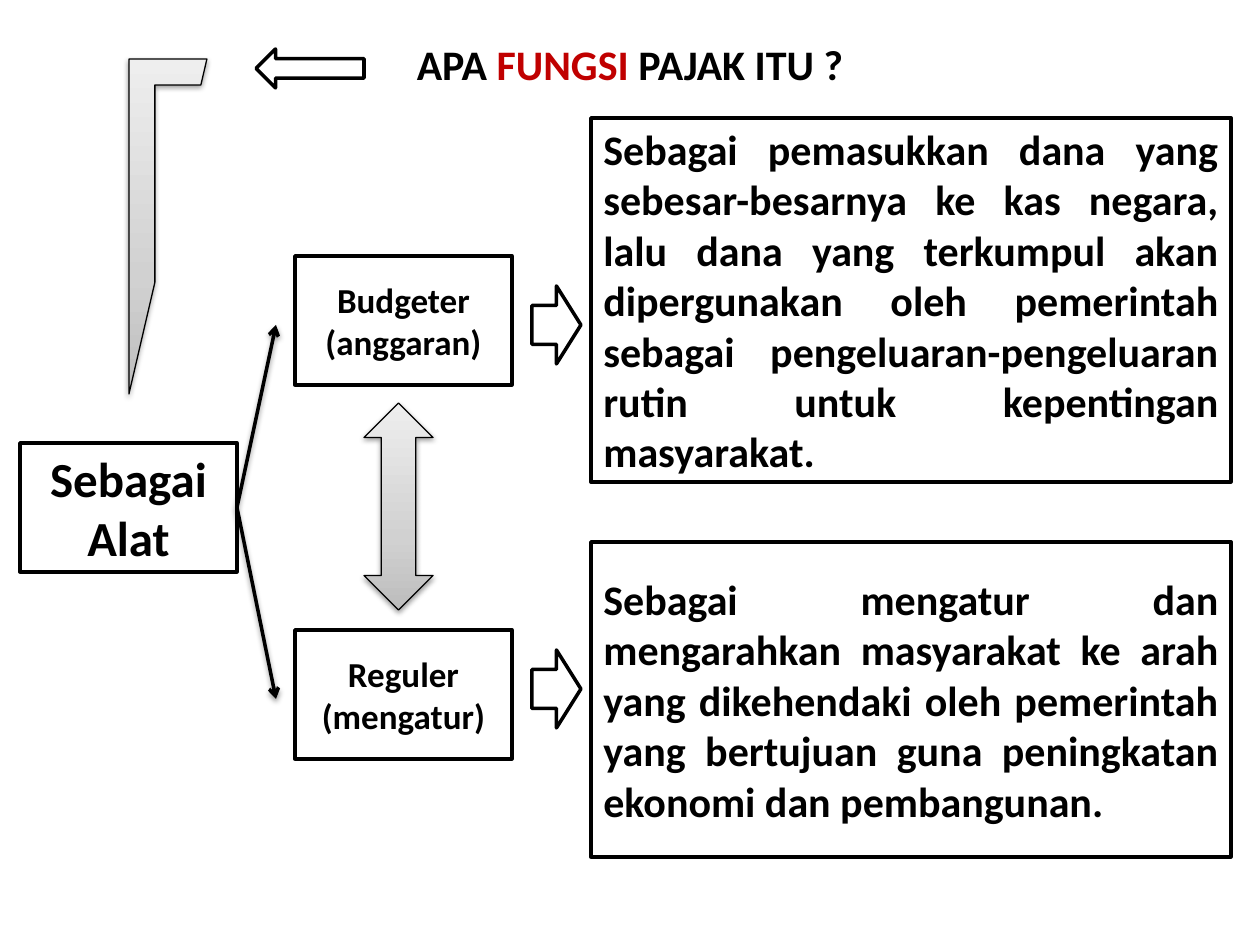
from copy import deepcopy
from dataclasses import dataclass

from pptx import Presentation
from pptx.dml.color import RGBColor
from pptx.enum.shapes import MSO_CONNECTOR, MSO_SHAPE
from pptx.enum.text import MSO_ANCHOR, MSO_AUTO_SIZE, PP_ALIGN
from pptx.oxml import parse_xml
from pptx.oxml.ns import nsdecls, qn
from pptx.util import Emu, Pt

SCALE = 914400 / 126
BLACK, WHITE, RED = "000000", "FFFFFF", "C00000"
GREYS = [(0, "BDBDBD"), (0.35, "D1D1D1"), (1, "EEEEEE")]
FRAME = {"word_wrap": True, "auto_size": MSO_AUTO_SIZE.NONE,
         "vertical_anchor": MSO_ANCHOR.MIDDLE}


@dataclass
class Box:
    x: int
    y: int
    w: int
    h: int
    text: str
    size: int
    align: PP_ALIGN = PP_ALIGN.CENTER


@dataclass
class Arrow:
    kind: MSO_SHAPE
    x: int
    y: int
    w: int
    h: int
    shaded: bool = False


SOURCE = Box(20, 443, 217, 129, "Sebagai Alat", 28)
BOXES = [
    Box(295, 256, 217, 129, "Budgeter (anggaran)", 20),
    Box(295, 630, 217, 129, "Reguler (mengatur)", 20),
    Box(591, 118, 640, 364, "Sebagai pemasukkan dana yang sebesar-besarnya ke kas "
        "negara, lalu dana yang terkumpul akan dipergunakan oleh pemerintah sebagai "
        "pengeluaran-pengeluaran rutin untuk kepentingan masyarakat.", 24, PP_ALIGN.JUSTIFY),
    Box(591, 542, 640, 315, "Sebagai mengatur dan mengarahkan masyarakat ke arah yang "
        "dikehendaki oleh pemerintah yang bertujuan guna peningkatan ekonomi dan "
        "pembangunan.", 24, PP_ALIGN.JUSTIFY),
]
ARROWS = [
    Arrow(MSO_SHAPE.RIGHT_ARROW, 532, 286, 49, 78),
    Arrow(MSO_SHAPE.RIGHT_ARROW, 532, 650, 49, 78),
    Arrow(MSO_SHAPE.LEFT_ARROW, 256, 49, 108, 39),
    Arrow(MSO_SHAPE.UP_DOWN_ARROW, 364, 403, 69, 207, True),
    Arrow(MSO_SHAPE.HALF_FRAME, 129, 59, 78, 335, True),
]
BRANCH_ENDS = [(276, 325), (276, 699)]
TITLE = [("APA ", BLACK), ("FUNGSI ", RED), ("PAJAK ITU ?", BLACK)]


def px(n: int) -> Emu:
    return Emu(round(n * SCALE))


def rgb(value: str) -> RGBColor:
    return RGBColor.from_string(value)


def apply(target, formats: dict) -> None:
    for name, value in formats.items():
        setattr(target, name, value)


def add_run(p, text: str, size: int, color: str) -> None:
    r = p.add_run()
    r.text = text
    apply(r.font, {"name": "Calibri", "size": Pt(size), "bold": True})
    r.font.color.rgb = rgb(color)


def add_shadow(sp) -> None:
    sp_pr = sp._element.spPr
    for old in sp_pr.findall(qn("a:effectLst")):
        sp_pr.remove(old)
    sp_pr.append(parse_xml(
        f'<a:effectLst {nsdecls("a")}><a:outerShdw blurRad="{Pt(3.1)}" dist="{Pt(1.6)}" '
        f'dir="5400000" rotWithShape="0"><a:srgbClr val="{BLACK}"><a:alpha val="38000"/>'
        '</a:srgbClr></a:outerShdw></a:effectLst>'))


def fill_gradient(sp) -> None:
    sp.fill.gradient()
    sp.fill.gradient_angle = 90
    first = sp._element.spPr.find(".//" + qn("a:gs"))
    first.addnext(deepcopy(first))
    for stop, (position, color) in zip(sp.fill.gradient_stops, GREYS):
        stop.position = position
        stop.color.rgb = rgb(color)


def add_outlined(s, kind: MSO_SHAPE, item: Box | Arrow, line: float = 2):
    sp = s.shapes.add_shape(kind, px(item.x), px(item.y), px(item.w), px(item.h))
    sp.shadow.inherit = False
    sp.fill.solid()
    sp.fill.fore_color.rgb = rgb(WHITE)
    sp.line.color.rgb = rgb(BLACK)
    sp.line.width = Pt(line)
    return sp


def add_box(s, box: Box):
    sp = add_outlined(s, MSO_SHAPE.RECTANGLE, box)
    tf = sp.text_frame
    apply(tf, FRAME)
    p = tf.paragraphs[0]
    p.alignment = box.align
    add_run(p, box.text, box.size, BLACK)
    return sp


def add_arrow(s, arrow: Arrow) -> None:
    sp = add_outlined(s, arrow.kind, arrow, 0.75 if arrow.shaded else 2)
    if arrow.shaded:
        fill_gradient(sp)
        add_shadow(sp)


def add_branch(s, source, x: int, y: int) -> None:
    line = s.shapes.add_connector(MSO_CONNECTOR.STRAIGHT, 0, 0, px(x), px(y))
    line.begin_connect(source, 3)
    line.line.color.rgb = rgb(BLACK)
    line.line.width = Pt(2)
    line.line._get_or_add_ln().append(
        parse_xml(f'<a:tailEnd {nsdecls("a")} type="arrow"/>'))
    add_shadow(line)


def set_title(s) -> None:
    title = s.shapes.title
    apply(title, {"left": px(63), "top": px(29), "width": px(1134), "height": px(69)})
    tf = title.text_frame
    apply(tf, FRAME)
    p = tf.paragraphs[0]
    p.alignment = PP_ALIGN.CENTER
    for text, color in TITLE:
        add_run(p, text, 24, color)


def main() -> None:
    prs = Presentation()
    apply(prs, {"slide_width": px(1260), "slide_height": px(945)})
    s = prs.slides.add_slide(prs.slide_layouts[5])
    set_title(s)
    source = add_box(s, SOURCE)
    for box in BOXES:
        add_box(s, box)
    for arrow in ARROWS:
        add_arrow(s, arrow)
    for x, y in BRANCH_ENDS:
        add_branch(s, source, x, y)
    prs.save("out.pptx")


if __name__ == "__main__":
    main()
